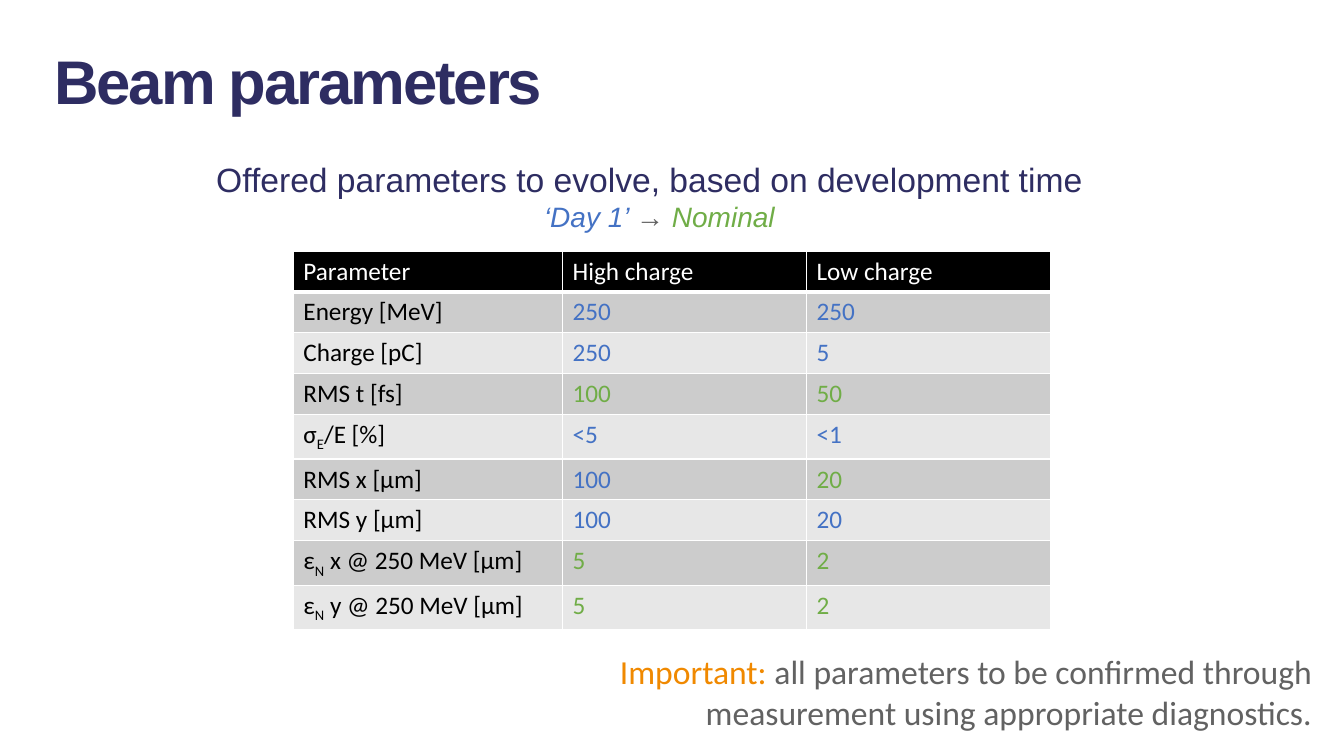
from dataclasses import dataclass

from lxml.etree import SubElement
from pptx import Presentation
from pptx.dml.color import RGBColor
from pptx.enum.text import MSO_AUTO_SIZE as AutoSize, PP_ALIGN as Align
from pptx.oxml.ns import qn
from pptx.util import Pt

EMU_PER_PX = 9144


@dataclass(frozen=True)
class Theme:
    navy: str = "2E2D62"
    grey: str = "626262"
    orange: str = "F08900"
    day_one: str = "4472C4"
    nominal: str = "70AD47"
    black: str = "000000"
    white: str = "FFFFFF"
    odd_row: str = "CCCCCC"
    even_row: str = "E7E7E7"
    heading_font: str = "Arial"
    body_font: str = "Calibri"
    title_size: int = 44
    lead_size: int = 24
    legend_size: int = 20
    table_size: int = 18


THEME = Theme()
DAY_ONE, NOMINAL = THEME.day_one, THEME.nominal

HEADER = ["Parameter", "High charge", "Low charge"]
# Each label is a list of (text, is_subscript); each value has its stage colour.
PARAMETERS = [
    ([("Energy [MeV]", False)], ("250", DAY_ONE), ("250", DAY_ONE)),
    ([("Charge [pC]", False)], ("250", DAY_ONE), ("5", DAY_ONE)),
    ([("RMS t [fs]", False)], ("100", NOMINAL), ("50", NOMINAL)),
    ([("σ", False), ("E", True), ("/E [%]", False)], ("<5", DAY_ONE), ("<1", DAY_ONE)),
    ([("RMS x [µm]", False)], ("100", DAY_ONE), ("20", NOMINAL)),
    ([("RMS y [µm]", False)], ("100", DAY_ONE), ("20", DAY_ONE)),
    ([("ε", False), ("N", True), (" x @ 250 MeV [µm]", False)], ("5", NOMINAL), ("2", NOMINAL)),
    ([("ε", False), ("N", True), (" y @ 250 MeV [µm]", False)], ("5", NOMINAL), ("2", NOMINAL)),
]


def px(length):
    return length * EMU_PER_PX


def add_run(paragraph, text, color, run_attributes=None, **font_format):
    """Append a run; run_attributes are raw rPr values such as spc or baseline."""
    run = paragraph.add_run()
    run.text = text
    run.font.color.rgb = RGBColor.from_string(color)
    for name, value in font_format.items():
        setattr(run.font, name, Pt(value) if name == "size" else value)
    for name, value in (run_attributes or {}).items():
        run._r.get_or_add_rPr().set(name, str(value))


def add_text_frame(slide, box):
    frame = slide.shapes.add_textbox(*map(px, box)).text_frame
    frame.word_wrap = True
    frame.auto_size = AutoSize.SHAPE_TO_FIT_TEXT
    return frame


def add_title(slide, box):
    paragraph = add_text_frame(slide, box).paragraphs[0]
    add_run(paragraph, "Beam parameters", THEME.navy, {"spc": -150},
            name=THEME.heading_font, size=THEME.title_size, bold=True)


def add_subtitle(slide, box):
    frame = add_text_frame(slide, box)
    lead, legend = frame.paragraphs[0], frame.add_paragraph()
    for paragraph, indent in ((lead, 22), (legend, 42)):
        paragraph.alignment = Align.CENTER
        paragraph._p.get_or_add_pPr().set("marL", str(px(indent)))
    add_run(lead, "Offered parameters to evolve, based on development time",
            THEME.navy, name=THEME.heading_font, size=THEME.lead_size)
    for text, color in (("‘Day 1’ ", DAY_ONE), ("→ ", THEME.grey), ("Nominal", NOMINAL)):
        add_run(legend, text, color, name=THEME.heading_font,
                size=THEME.legend_size, italic=True)


def style_cell(cell, fill, bottom_width=1):
    """Draw white borders first, since the schema puts them before the fill."""
    properties = cell._tc.get_or_add_tcPr()
    for side, width in (("L", 1), ("R", 1), ("T", 1), ("B", bottom_width)):
        line = SubElement(properties, qn(f"a:ln{side}"), w=str(Pt(width)))
        SubElement(SubElement(line, qn("a:solidFill")), qn("a:srgbClr"), val=THEME.white)
    cell.fill.solid()
    cell.fill.fore_color.rgb = RGBColor.from_string(fill)


def add_parameter_table(slide, box, column_widths):
    shape = slide.shapes.add_table(len(PARAMETERS) + 1, len(HEADER), *map(px, box))
    table = shape.table
    for column, width in zip(table.columns, column_widths):
        column.width = px(width)
    font = {"name": THEME.body_font, "size": THEME.table_size, "bold": False}

    for cell, text in zip(table.rows[0].cells, HEADER):
        style_cell(cell, THEME.black, bottom_width=3)
        add_run(cell.text_frame.paragraphs[0], text, THEME.white, **font)

    for index, (label, *values) in enumerate(PARAMETERS, start=1):
        cells = list(table.rows[index].cells)
        for cell in cells:
            style_cell(cell, THEME.odd_row if index % 2 else THEME.even_row)
        for text, is_subscript in label:
            add_run(cells[0].text_frame.paragraphs[0], text, THEME.black,
                    {"baseline": -25000} if is_subscript else None, **font)
        for cell, (text, color) in zip(cells[1:], values):
            add_run(cell.text_frame.paragraphs[0], text, color, **font)


def add_notice(slide, box):
    paragraph = add_text_frame(slide, box).paragraphs[0]
    paragraph.alignment = Align.RIGHT
    for text, color in (
        ("Important: ", THEME.orange),
        ("all parameters to be confirmed through measurement "
         "using appropriate diagnostics.", THEME.grey),
    ):
        add_run(paragraph, text, color, name=THEME.body_font, size=THEME.lead_size)


def main():
    presentation = Presentation()
    presentation.slide_width, presentation.slide_height = px(1333), px(750)
    slide = presentation.slides.add_slide(presentation.slide_layouts[6])
    add_subtitle(slide, (47, 153, 1172, 84))
    add_title(slide, (44, 38, 1278, 84))
    add_parameter_table(slide, (291, 249, 751, 365), (267, 242, 242))
    add_notice(slide, (522, 641, 789, 91))
    presentation.save("out.pptx")


if __name__ == "__main__":
    main()
